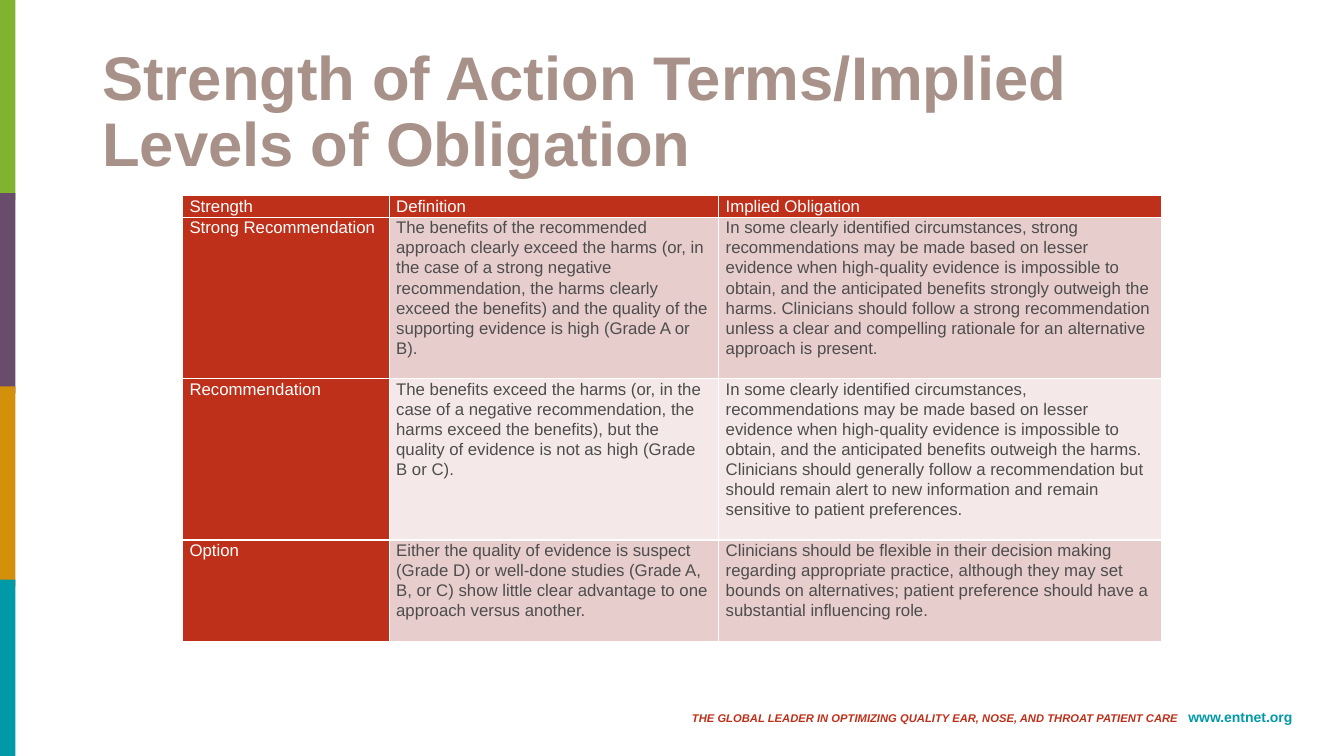
from lxml import etree
from pptx import Presentation
from pptx.dml.color import RGBColor
from pptx.enum.shapes import MSO_SHAPE
from pptx.enum.text import MSO_ANCHOR, PP_ALIGN
from pptx.oxml.ns import qn
from pptx.util import Pt

RECTANGLE = MSO_SHAPE.RECTANGLE
MIDDLE = MSO_ANCHOR.MIDDLE
RIGHT = PP_ALIGN.RIGHT

COLORS = {
    "green": "80B330",
    "purple": "694C6B",
    "gold": "D3910B",
    "teal": "0099A8",
    "red": "BF301A",
    "taupe": "A89188",
    "text": "4D4D4D",
    "rose": "E8CDCD",
    "blush": "F4E8E8",
    "white": "FFFFFF",
}


def style_font(font, size, color, bold=False, italic=False):
    font.name = "Arial"
    font.size = Pt(size)
    font.bold = bold
    font.italic = italic
    font.color.rgb = RGBColor.from_string(COLORS[color])


def add_borders(cell):
    properties = cell._tc.get_or_add_tcPr()
    for position, side in enumerate(("lnL", "lnR", "lnT", "lnB")):
        line = etree.Element(qn(f"a:{side}"), w=str(Pt(1)))
        solid = etree.SubElement(line, qn("a:solidFill"))
        etree.SubElement(solid, qn("a:srgbClr"), val=COLORS["white"])
        properties.insert(position, line)


prs = Presentation()
prs.slide_width = Pt(960)
prs.slide_height = Pt(540)
slide = prs.slides.add_slide(prs.slide_layouts[6])

footer = slide.shapes.add_textbox(Pt(376.5), Pt(502.5), Pt(553.7), Pt(19.4)).text_frame
footer.word_wrap = True
footer_line = footer.paragraphs[0]
footer_line.alignment = RIGHT
slogan = footer_line.add_run()
slogan.text = "THE GLOBAL LEADER IN OPTIMIZING QUALITY EAR, NOSE, AND THROAT PATIENT CARE"
style_font(slogan.font, 8, "red", bold=True, italic=True)
gap = footer_line.add_run()
gap.text = " "
style_font(gap.font, 8, "red", bold=True)
gap.font._element.set("spc", "450")
website = footer_line.add_run()
website.text = "www.entnet.org"
style_font(website.font, 10, "teal", bold=True)

for index, color in enumerate(("green", "purple", "gold", "teal")):
    top = index * 138
    band_height = min(143, 540 - top)
    band = slide.shapes.add_shape(RECTANGLE, 0, Pt(top), Pt(11), Pt(band_height))
    band.shadow.inherit = False
    band.fill.solid()
    band.fill.fore_color.rgb = RGBColor.from_string(COLORS[color])
    band.line.fill.background()

title = slide.shapes.add_textbox(Pt(66), Pt(28.75), Pt(828), Pt(104.4)).text_frame
title.word_wrap = True
title.vertical_anchor = MIDDLE
title.text = "Strength of Action Terms/Implied Levels of Obligation"
title.paragraphs[0].line_spacing = 0.9
style_font(title.paragraphs[0].runs[0].font, 44, "taupe", bold=True)

obligations = [
    ("Strength", "Definition", "Implied Obligation"),
    (
        "Strong Recommendation",
        "The benefits of the recommended approach clearly exceed the harms (or, in the "
        "case of a strong negative recommendation, the harms clearly exceed the benefits) "
        "and the quality of the supporting evidence is high (Grade A or B).",
        "In some clearly identified circumstances, strong recommendations may be made "
        "based on lesser evidence when high-quality evidence is impossible to obtain, and "
        "the anticipated benefits strongly outweigh the harms. Clinicians should follow a "
        "strong recommendation unless a clear and compelling rationale for an alternative "
        "approach is present.",
    ),
    (
        "Recommendation",
        "The benefits exceed the harms (or, in the case of a negative recommendation, the "
        "harms exceed the benefits), but the quality of evidence is not as high (Grade B "
        "or C).",
        "In some clearly identified circumstances, recommendations may be made based on "
        "lesser evidence when high-quality evidence is impossible to obtain, and the "
        "anticipated benefits outweigh the harms. Clinicians should generally follow a "
        "recommendation but should remain alert to new information and remain sensitive "
        "to patient preferences.",
    ),
    (
        "Option",
        "Either the quality of evidence is suspect (Grade D) or well-done studies (Grade "
        "A, B, or C) show little clear advantage to one approach versus another.",
        "Clinicians should be flexible in their decision making regarding appropriate "
        "practice, although they may set bounds on alternatives; patient preference "
        "should have a substantial influencing role.",
    ),
]
column_widths = (147.6, 235.4, 316.1)
row_heights = (15.3, 115.3, 115.3, 72.8)

table = slide.shapes.add_table(
    len(row_heights), len(column_widths), Pt(130.4), Pt(139.7),
    Pt(sum(column_widths)), Pt(sum(row_heights)),
).table
for column, width in zip(table.columns, column_widths):
    column.width = Pt(width)
for row, height in zip(table.rows, row_heights):
    row.height = Pt(height)

for r, entries in enumerate(obligations):
    for c, entry in enumerate(entries):
        is_heading = r == 0 or c == 0
        fill = "red" if is_heading else "rose" if r % 2 else "blush"
        cell = table.cell(r, c)
        cell.margin_left = cell.margin_right = Pt(5)
        cell.margin_top = cell.margin_bottom = 0
        cell.fill.solid()
        cell.fill.fore_color.rgb = RGBColor.from_string(COLORS[fill])
        add_borders(cell)
        cell.text_frame.text = entry
        paragraph = cell.text_frame.paragraphs[0]
        paragraph.line_spacing = 1.07
        style_font(paragraph.runs[0].font, 12, "white" if is_heading else "text")

prs.save("out.pptx")
